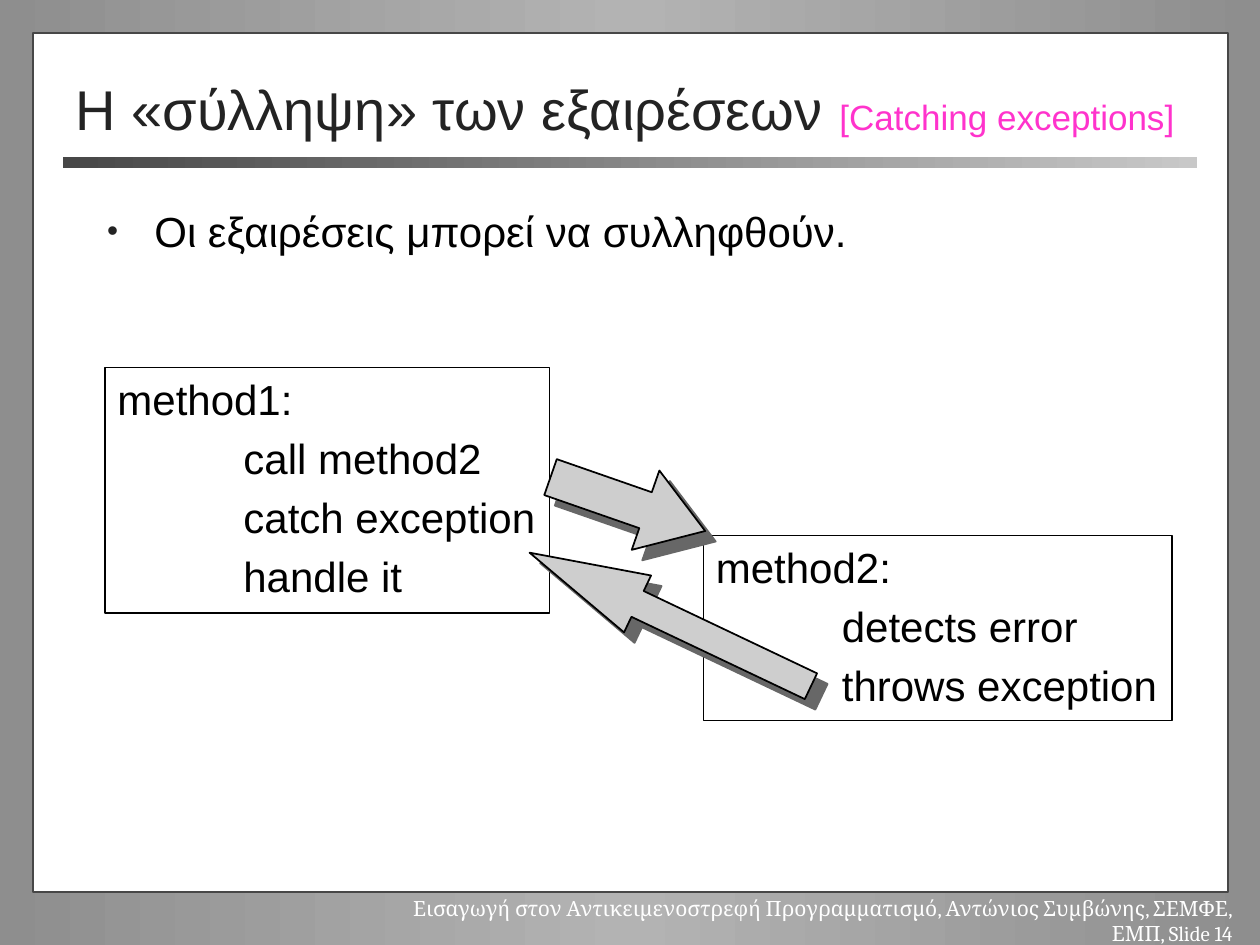
from copy import deepcopy
from dataclasses import dataclass

from lxml import etree
from pptx import Presentation
from pptx.dml.color import RGBColor
from pptx.enum import shapes, text
from pptx.oxml.ns import qn
from pptx.util import Pt

COLOURS = {
    "white": "FFFFFF", "black": "000000", "ink": "232323", "frame": "474747",
    "bar end": "C8C8C8", "edge": "8E8E8E", "middle": "B3B3B3",
    "accent": "FF33CC", "arrow": "CECECE", "shadow": "676767",
}
SPACE_BEFORE = 4.8
TAB_WIDTH = 72


@dataclass
class Area:
    left: float
    top: float
    width: float
    height: float

    def lengths(self) -> tuple:
        return Pt(self.left), Pt(self.top), Pt(self.width), Pt(self.height)


@dataclass
class Method:
    area: Area
    name: str
    steps: tuple


@dataclass
class Arrow:
    area: Area
    rotation: float
    head_length: float


METHODS = (
    Method(Area(60, 210, 254, 140.4), "method1:",
           ("call method2", "catch exception", "handle it")),
    Method(Area(402, 306, 267.6, 105.8), "method2:",
           ("detects error", "throws exception")),
)
ARROWS = (
    Arrow(Area(294, 336, 178, 36), 25.4, 1.898),
    Arrow(Area(312, 264, 93.6, 48), 199.2, 0.753),
)


def rgb(name: str) -> RGBColor:
    return RGBColor.from_string(COLOURS[name])


def fill_gradient(fill, *names: str) -> None:
    """Fill from left to right with evenly spaced colours."""
    fill.gradient()
    fill.gradient_angle = 0
    first = fill.gradient_stops[0]
    stop_list = first._gs.getparent()
    while len(stop_list) < len(names):
        stop_list.append(deepcopy(stop_list[0]))
    for index, (stop, name) in enumerate(zip(fill.gradient_stops, names)):
        stop.color.rgb = rgb(name)
        stop.position = index / (len(names) - 1)


def add_span(para, words: str, size: float, colour: str, font: str = "Arial") -> None:
    span = para.add_run()
    span.text = words
    span.font.size = Pt(size)
    span.font.name = font
    span.font.color.rgb = rgb(colour)


def add_panel(page, area: Area, preset=shapes.MSO_SHAPE.RECTANGLE,
              fill: str = "", line: str = ""):
    panel = page.shapes.add_shape(preset, *area.lengths())
    panel.shadow.inherit = False
    if fill:
        panel.fill.solid()
        panel.fill.fore_color.rgb = rgb(fill)
    else:
        panel.fill.background()
    if line:
        panel.line.color.rgb = rgb(line)
        panel.line.width = Pt(1)
    else:
        panel.line.fill.background()
    return panel


def place(page, holder, area: Area):
    """Move a placeholder to its area, in front of what is drawn so far."""
    holder.left, holder.top, holder.width, holder.height = area.lengths()
    page.shapes.element.append(holder.element)
    frame = holder.text_frame
    frame.auto_size = text.MSO_AUTO_SIZE.NONE
    para = frame.paragraphs[0]
    para.alignment = text.PP_ALIGN.LEFT
    return para


def set_bullet(para, indent: float) -> None:
    properties = para._p.get_or_add_pPr()
    properties.set("marL", str(Pt(indent)))
    properties.set("indent", str(-Pt(indent)))
    colour = etree.SubElement(properties, qn("a:buClr"))
    etree.SubElement(colour, qn("a:srgbClr"), val=COLOURS["ink"])
    etree.SubElement(properties, qn("a:buSzPct"), val="75000")
    etree.SubElement(properties, qn("a:buChar"), char="•")


def set_tab(para, position: float) -> None:
    properties = para._p.get_or_add_pPr()
    properties.set("defTabSz", str(Pt(position)))
    tabs = etree.SubElement(properties, qn("a:tabLst"))
    etree.SubElement(tabs, qn("a:tab"), pos=str(Pt(position)), algn="l")


def add_method(page, method: Method) -> None:
    box = add_panel(page, method.area, line="black")
    frame = box.text_frame
    frame.word_wrap = False
    frame.vertical_anchor = text.MSO_ANCHOR.TOP
    lines = [method.name] + ["\t" + step for step in method.steps]
    for index, words in enumerate(lines):
        para = frame.add_paragraph() if index else frame.paragraphs[0]
        para.alignment = text.PP_ALIGN.LEFT
        para.space_before = Pt(SPACE_BEFORE)
        set_tab(para, TAB_WIDTH)
        add_span(para, words, 24, "black")


def add_arrow(page, arrow: Arrow) -> None:
    block = add_panel(page, arrow.area, shapes.MSO_SHAPE.LEFT_ARROW, "arrow", "black")
    block.rotation = arrow.rotation
    block.adjustments[0] = 0.452
    block.adjustments[1] = arrow.head_length
    effects = block.element.spPr.find(qn("a:effectLst"))
    shadow = etree.SubElement(effects, qn("a:outerShdw"), blurRad="0",
                              dist=str(Pt(8.5)), dir=str(45 * 60000),
                              algn="ctr", rotWithShape="0")
    etree.SubElement(shadow, qn("a:srgbClr"), val=COLOURS["shadow"])


def add_footer(page) -> None:
    box = page.shapes.add_textbox(*Area(201.6, 508.3, 509.8, 21.6).lengths())
    box.text_frame.word_wrap = True
    para = box.text_frame.paragraphs[0]
    para.alignment = text.PP_ALIGN.RIGHT
    add_span(para, "Εισαγωγή στον Αντικειμενοστρεφή Προγραμματισμό, "
             "Αντώνιος Συμβώνης, ΣΕΜΦΕ, ΕΜΠ, Slide 14", 12, "white", "Cambria")


def main() -> None:
    deck = Presentation()
    deck.slide_width, deck.slide_height = Pt(720), Pt(540)
    page = deck.slides.add_slide(deck.slide_layouts[1])
    fill_gradient(page.background.fill, "edge", "middle", "edge")

    add_panel(page, Area(18.7, 18.7, 683, 491), fill="white", line="frame")
    bar = add_panel(page, Area(36, 90, 648, 6))
    fill_gradient(bar.fill, "frame", "bar end")
    add_footer(page)

    title = place(page, page.shapes.title, Area(36, 39.6, 648, 44.6))
    page.shapes.title.text_frame.vertical_anchor = text.MSO_ANCHOR.MIDDLE
    add_span(title, "Η «σύλληψη» των εξαιρέσεων ", 32, "ink")
    add_span(title, "[Catching exceptions]", 20, "accent")

    body = place(page, page.placeholders[1], Area(54, 114, 612, 54))
    body.space_before = Pt(SPACE_BEFORE)
    set_bullet(body, 27)
    add_span(body, "Οι εξαιρέσεις μπορεί να συλληφθούν.", 24, "black")

    for method in METHODS:
        add_method(page, method)
    for arrow in ARROWS:
        add_arrow(page, arrow)
    deck.save("out.pptx")


if __name__ == "__main__":
    main()
